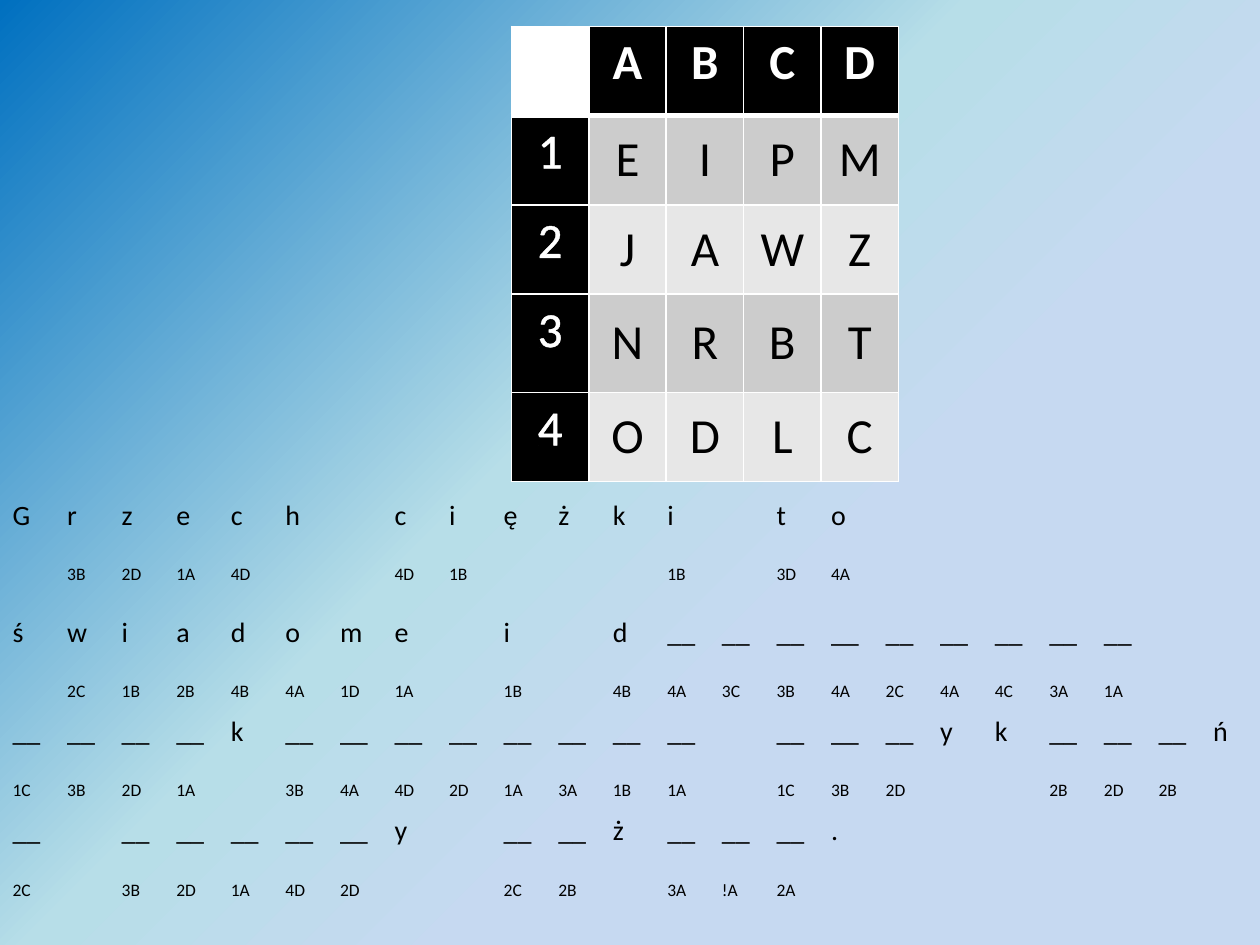
from lxml.etree import SubElement
from pptx import Presentation
from pptx.dml.color import RGBColor
from pptx.enum.text import MSO_ANCHOR, PP_ALIGN
from pptx.oxml.ns import qn
from pptx.util import Cm, Pt

COLORS = {
    "blue": "0070C0",
    "aqua": "B7DEE8",
    "pale": "C6D9F1",
    "white": "FFFFFF",
    "black": "000000",
    "dark_band": "CCCCCC",
    "light_band": "E7E7E7",
}
NO_GRID_STYLE = "{2D5ABB26-0587-4C30-8999-92F81FD0307C}"


def write_cell(cell, text, size, color="black", bold=False, align=PP_ALIGN.LEFT,
               anchor=MSO_ANCHOR.TOP, fill=None, outline=None):
    """Fill and format one cell; an empty one keeps the size for its row height."""
    cell.vertical_anchor = anchor
    if fill:
        cell.fill.solid()
        cell.fill.fore_color.rgb = RGBColor.from_string(COLORS[fill])
    else:
        cell.fill.background()
    paragraph = cell.text_frame.paragraphs[0]
    paragraph.alignment = align
    if not text:
        SubElement(paragraph._p, qn("a:endParaRPr"), sz=str(size * 100))
        return
    run = paragraph.add_run()
    run.text = text
    run.font.name = "Calibri"
    run.font.size = Pt(size)
    run.font.bold = bold
    run.font.color.rgb = RGBColor.from_string(COLORS[color])
    if outline:
        run_properties = run._r.get_or_add_rPr()
        line = SubElement(run_properties, qn("a:ln"), w=str(Pt(0.75)))
        solid = SubElement(line, qn("a:solidFill"))
        SubElement(solid, qn("a:srgbClr"), val=COLORS[outline])
        run_properties.insert(0, line)


def add_plain_table(slide, left, top, column_width, columns, row_heights):
    """Add a table without any style of its own."""
    shape = slide.shapes.add_table(len(row_heights), columns, Cm(left), Cm(top),
                                   Cm(column_width * columns), Cm(sum(row_heights)))
    table = shape.table
    table.first_row = table.horz_banding = False
    table._tbl.tblPr.find(qn("a:tableStyleId")).text = NO_GRID_STYLE
    for column in table.columns:
        column.width = Cm(column_width)
    for row, height in zip(table.rows, row_heights):
        row.height = Cm(height)
    return shape


presentation = Presentation()
presentation.slide_width = Cm(25.4)
presentation.slide_height = Cm(19.05)
slide = presentation.slides.add_slide(presentation.slide_layouts[6])

# Background gradient
background = slide.background.fill
background.gradient()
background.gradient_angle = 315
stops = background._fill._gradFill.find(qn("a:gsLst"))
for stop in list(stops):
    stops.remove(stop)
for position, name in ((0, "blue"), (44, "aqua"), (64, "pale"), (100, "pale")):
    stop = SubElement(stops, qn("a:gs"), pos=str(position * 1000))
    SubElement(stop, qn("a:srgbClr"), val=COLORS[name])

# Key: letters by row number and column letter
key_rows = [" ABCD", "1EIPM", "2JAWZ", "3NRBT", "4ODLC"]
key_table = add_plain_table(slide, 10.31, 0.53, 1.56, 5, [1.8, 1.8, 1.8, 1.98, 1.8]).table
for row, letters in enumerate(key_rows):
    for column, letter in enumerate(letters):
        cell = key_table.cell(row, column)
        look = {"align": PP_ALIGN.CENTER}
        if row == 0:
            look.update(color="white", bold=True, fill="black" if column else "white")
        elif column == 0:
            look.update(color="white", fill="black", outline="white")
        else:
            look.update(anchor=MSO_ANCHOR.MIDDLE,
                        fill="dark_band" if row % 2 else "light_band")
        write_cell(cell, letter.strip(), 28, **look)

        properties = cell._tc.get_or_add_tcPr()
        header_edge = {0: "lnB", 1: "lnT"}.get(row)
        for index, side in enumerate(("lnL", "lnR", "lnT", "lnB")):
            width = Pt(3 if side == header_edge else 1)
            border = SubElement(properties, qn(f"a:{side}"), w=str(width))
            solid = SubElement(border, qn("a:solidFill"))
            SubElement(solid, qn("a:srgbClr"), val=COLORS["white"])
            properties.insert(index, border)

# Puzzle: letter rows alternate with code rows, "-" marks an empty cell
puzzle_rows = [
    "G r z e c h - c i ę ż k i - t o",
    "- 3B 2D 1A 4D - - 4D 1B - - - 1B - 3D 4A",
    "ś w i a d o m e - i - d __ __ __ __ __ __ __ __ __",
    "- 2C 1B 2B 4B 4A 1D 1A - 1B - 4B 4A 3C 3B 4A 2C 4A 4C 3A 1A",
    "__ __ __ __ k __ __ __ __ __ __ __ __ - __ __ __ y k __ __ __ ń",
    "1C 3B 2D 1A - 3B 4A 4D 2D 1A 3A 1B 1A - 1C 3B 2D - - 2B 2D 2B",
    "__ - __ __ __ __ __ y - __ __ ż __ __ __ .",
    "2C - 3B 2D 1A 4D 2D - - 2C 2B - 3A !A 2A",
]
puzzle_columns = 23
puzzle_shape = add_plain_table(slide, 0, 9.93, 1.1, puzzle_columns, [1.32, 0.61] * 4)
for row, line in enumerate(puzzle_rows):
    entries = line.split()
    entries += ["-"] * (puzzle_columns - len(entries))
    text_size = 10 if row % 2 else 16
    empty_size = 18 if row == 1 else text_size
    for column, entry in enumerate(entries):
        cell = puzzle_shape.table.cell(row, column)
        if entry == "-":
            write_cell(cell, "", empty_size)
        else:
            write_cell(cell, entry, text_size)
puzzle_shape.height = Cm(8.33)

presentation.save("out.pptx")
